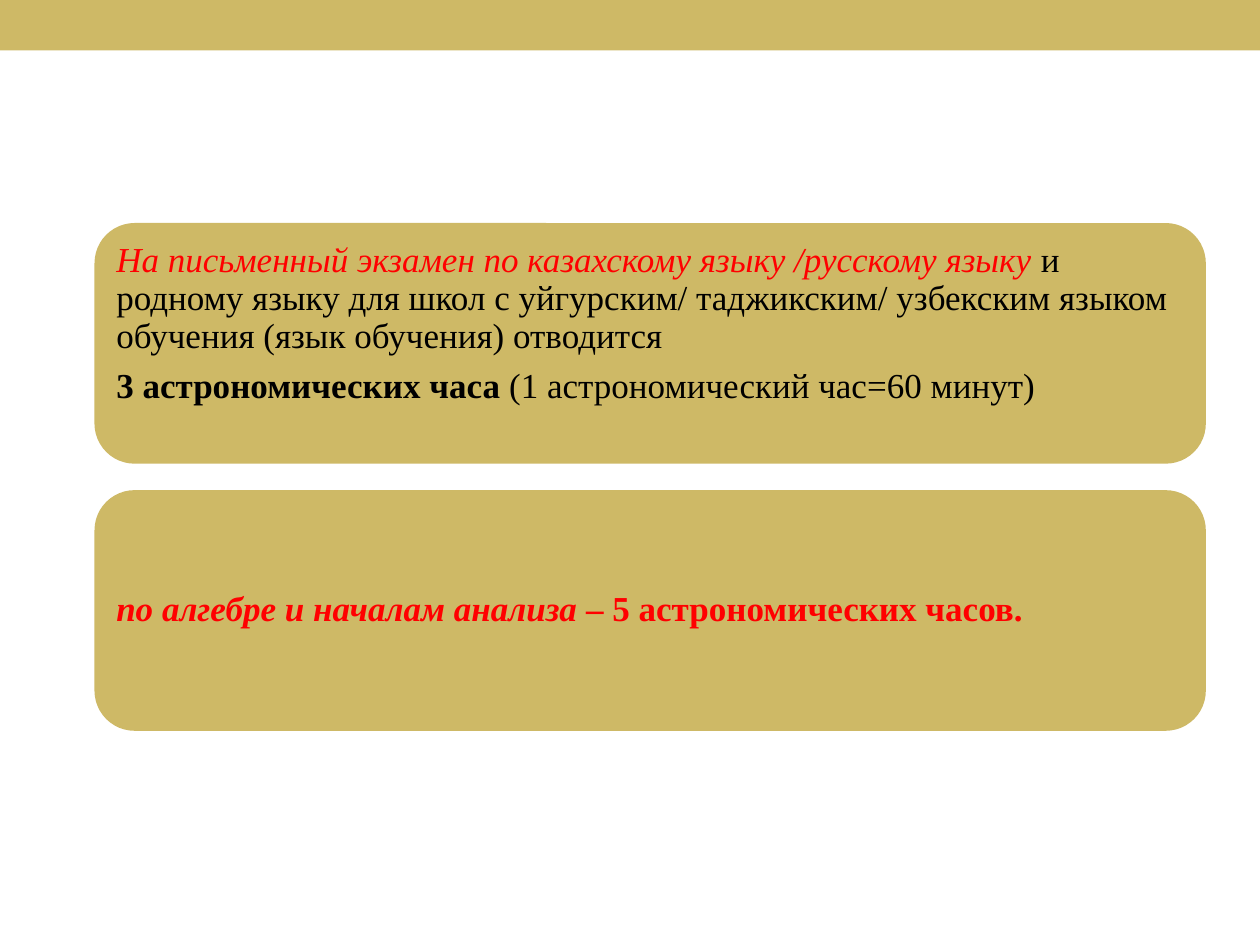
from dataclasses import dataclass

from pptx import Presentation
from pptx.dml.color import RGBColor
from pptx.enum.shapes import MSO_SHAPE
from pptx.enum.text import MSO_ANCHOR, PP_ALIGN
from pptx.util import Inches, Pt


@dataclass(frozen=True)
class Theme:
    gold: RGBColor = RGBColor(0xCE, 0xB9, 0x66)
    red: RGBColor = RGBColor(0xFF, 0x00, 0x00)
    black: RGBColor = RGBColor(0x00, 0x00, 0x00)
    font: str = "Times New Roman"
    size: int = 20
    space_after: int = 7
    line_spacing: float = 0.9


THEME = Theme()

# Each card: extra room below its text, then paragraphs made of (text, format) runs.
CARDS = [
    (0.3, [
        [("На письменный экзамен по казахскому языку /русскому языку\u00a0",
          {"color": THEME.red, "italic": True}),
         ("и родному языку для школ с уйгурским/ таджикским/ узбекским языком "
          "обучения (язык обучения) отводится", {})],
        [("3 астрономических часа", {"bold": True}),
         (" (1 астрономический час=60 минут)", {})],
    ]),
    (0, [
        [("по алгебре и началам анализа\u00a0",
          {"color": THEME.red, "bold": True, "italic": True}),
         ("– 5 астрономических часов.", {"color": THEME.red, "bold": True})],
    ]),
]

SLIDE_WIDTH, SLIDE_HEIGHT = 10, 7.5
BANNER_HEIGHT = 0.4
CARD_LEFT, CARD_TOP, CARD_WIDTH, CARD_HEIGHT = 0.75, 1.77, 8.82, 1.91
CARD_GAP = 0.21
INSET = 0.08


def add_gold_shape(slide, kind, left, top, width, height):
    shape = slide.shapes.add_shape(
        kind, Inches(left), Inches(top), Inches(width), Inches(height))
    shape.shadow.inherit = False
    shape.fill.solid()
    shape.fill.fore_color.rgb = THEME.gold
    shape.line.fill.background()
    return shape


def add_run(paragraph, text, color=THEME.black, bold=False, italic=False):
    run = paragraph.add_run()
    run.text = text
    run.font.name = THEME.font
    run.font.size = Pt(THEME.size)
    run.font.color.rgb = color
    run.font.bold = bold
    run.font.italic = italic


def fill_card(shape, paragraphs, room_below):
    frame = shape.text_frame
    frame.word_wrap = True
    frame.vertical_anchor = MSO_ANCHOR.MIDDLE
    frame.margin_left = frame.margin_right = frame.margin_top = Inches(INSET)
    frame.margin_bottom = Inches(INSET + room_below)
    for index, runs in enumerate(paragraphs):
        paragraph = frame.add_paragraph() if index else frame.paragraphs[0]
        paragraph.alignment = PP_ALIGN.LEFT
        paragraph.line_spacing = THEME.line_spacing
        paragraph.space_after = Pt(THEME.space_after)
        for text, text_format in runs:
            add_run(paragraph, text, **text_format)


def main():
    presentation = Presentation()
    presentation.slide_width = Inches(SLIDE_WIDTH)
    presentation.slide_height = Inches(SLIDE_HEIGHT)
    slide = presentation.slides.add_slide(presentation.slide_layouts[6])

    add_gold_shape(slide, MSO_SHAPE.RECTANGLE, 0, 0, SLIDE_WIDTH, BANNER_HEIGHT)
    for index, (room_below, paragraphs) in enumerate(CARDS):
        top = CARD_TOP + index * (CARD_HEIGHT + CARD_GAP)
        card = add_gold_shape(slide, MSO_SHAPE.ROUNDED_RECTANGLE,
                              CARD_LEFT, top, CARD_WIDTH, CARD_HEIGHT)
        fill_card(card, paragraphs, room_below)

    presentation.save("out.pptx")


if __name__ == "__main__":
    main()
